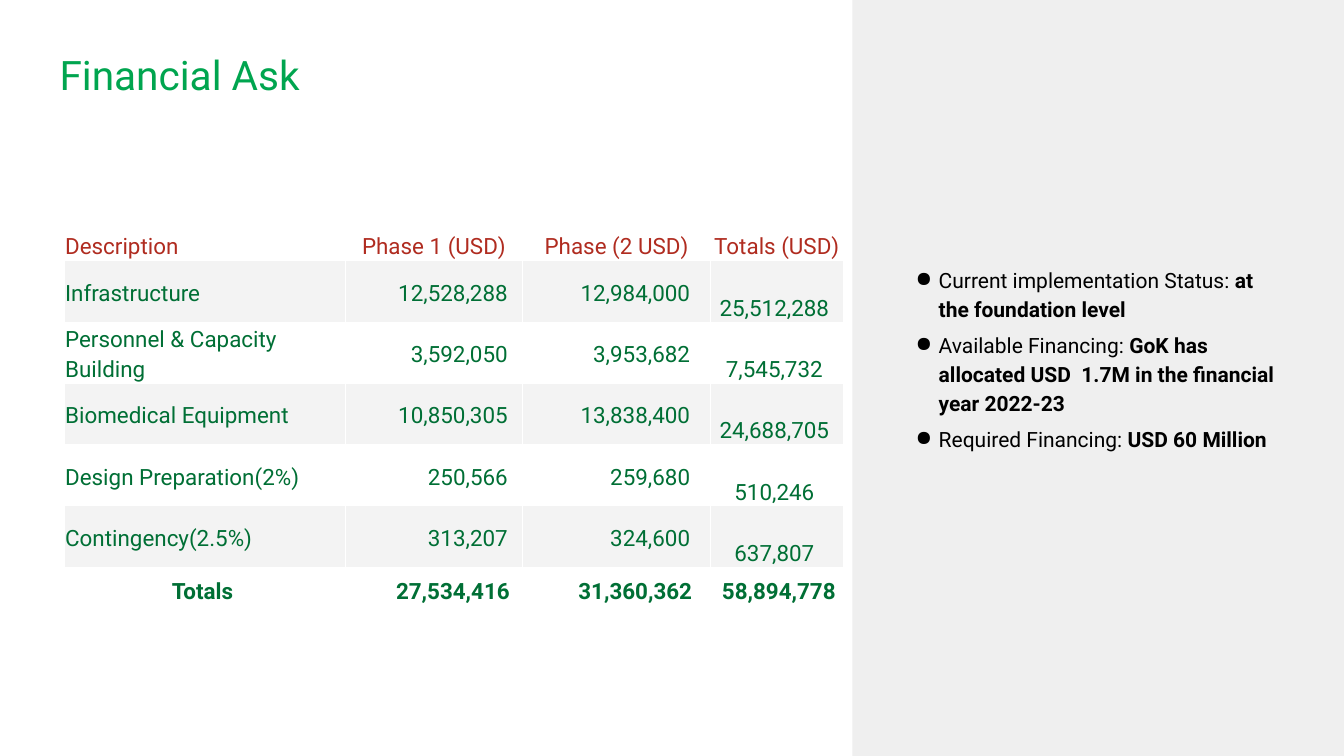
"""Build the Financial Ask slide with its funding table and status notes."""
import dataclasses
import typing

import lxml.etree
import pptx
import pptx.dml.color
import pptx.enum.shapes
import pptx.enum.text
import pptx.oxml.ns
import pptx.util

Pt = pptx.util.Pt
Align = pptx.enum.text.PP_ALIGN
Anchor = pptx.enum.text.MSO_ANCHOR
qualified = pptx.oxml.ns.qn

COLORS = {
    "title": "00A54F",
    "heading": "B02C20",
    "figures": "006F35",
    "ink": "000000",
    "panel": "9E9E9E",
    "band": "F3F3F3",
    "white": "FFFFFF",
}
FONT = "Roboto"
SLIDE_WIDTH, SLIDE_HEIGHT = 1920, 1080
PANEL_LEFT = 1217.5
COLUMN_WIDTHS = (401.5, 253, 268.5, 189.5)
HEADER_HEIGHT, ITEM_HEIGHT, TOTAL_HEIGHT = 45, 87.5, 65


@dataclasses.dataclass(frozen=True)
class Column:
    """Alignment, anchor and side insets of the item and total cells in a column."""
    align: Align
    anchor: Anchor
    right: float
    total_align: Align
    total_left: float
    total_right: float


@dataclasses.dataclass(frozen=True)
class Note:
    """A status note with a plain label and a bold value."""
    label: str
    value: str


COLUMNS = (
    Column(Align.LEFT, Anchor.MIDDLE, 1, Align.CENTER, 1, 8),
    Column(Align.RIGHT, Anchor.MIDDLE, 21, Align.RIGHT, 1, 18),
    Column(Align.RIGHT, Anchor.MIDDLE, 29, Align.RIGHT, 1, 26),
    Column(Align.CENTER, Anchor.BOTTOM, 8, Align.CENTER, 7, 1),
)
ROWS = (
    ("Description", "Phase 1 (USD)", "Phase (2 USD)", "Totals (USD)"),
    ("Infrastructure", "12,528,288", "12,984,000", "25,512,288"),
    ("Personnel & Capacity Building", "3,592,050", "3,953,682", "7,545,732"),
    ("Biomedical Equipment", "10,850,305", "13,838,400", "24,688,705"),
    ("Design Preparation(2%)", "250,566", "259,680", "510,246"),
    ("Contingency(2.5%)", "313,207", "324,600", "637,807"),
    ("Totals", "27,534,416", "31,360,362", "58,894,778"),
)
NOTES = (
    Note("Current implementation Status: ", "at the foundation level"),
    Note("Available Financing: ", "GoK has allocated USD  1.7M in the financial year 2022-23"),
    Note("Required Financing: ", "USD 60 Million"),
)


def rgb(name: str) -> pptx.dml.color.RGBColor:
    """Return a palette colour."""
    return pptx.dml.color.RGBColor.from_string(COLORS[name])


def add_text(paragraph: typing.Any, text: str, *, size: float, color: str, bold: bool = False,
             align: Align = Align.LEFT, line_spacing: float = 1.15) -> None:
    """Append a formatted run to a paragraph."""
    paragraph.alignment = align
    paragraph.line_spacing = line_spacing
    run = paragraph.add_run()
    run.text = text
    run.font.name = FONT
    run.font.size = Pt(size)
    run.font.bold = bold
    run.font.color.rgb = rgb(color)


def set_insets(target: typing.Any, left: float, top: float, right: float, bottom: float) -> None:
    """Set the inner margins of a cell or text frame."""
    target.margin_left, target.margin_top = Pt(left), Pt(top)
    target.margin_right, target.margin_bottom = Pt(right), Pt(bottom)


def add_panel(slide: typing.Any) -> None:
    """Draw the translucent side panel."""
    shape = slide.shapes.add_shape(pptx.enum.shapes.MSO_SHAPE.RECTANGLE, Pt(PANEL_LEFT), Pt(0),
                                   Pt(SLIDE_WIDTH - PANEL_LEFT), Pt(SLIDE_HEIGHT))
    shape.shadow.inherit = False
    shape.line.fill.background()
    shape.fill.solid()
    shape.fill.fore_color.rgb = rgb("panel")
    color = next(shape.element.iter(qualified("a:srgbClr")))
    lxml.etree.SubElement(color, qualified("a:alpha"), val="16000")


def set_title(slide: typing.Any, text: str) -> None:
    """Place and format the title placeholder."""
    title = slide.shapes.title
    title.left, title.top, title.width, title.height = Pt(65.5), Pt(45.5), Pt(1789), Pt(120)
    frame = title.text_frame
    frame.auto_size = pptx.enum.text.MSO_AUTO_SIZE.NONE
    frame.vertical_anchor = Anchor.MIDDLE
    set_insets(frame, 19.5, 19.5, 19.5, 19.5)
    add_text(frame.paragraphs[0], text, size=58, color="title", line_spacing=1.0)


def add_borders(cell: typing.Any) -> None:
    """Give a cell thin white borders, ahead of its fill."""
    properties = cell._tc.get_or_add_tcPr()
    for index, side in enumerate(("lnL", "lnR", "lnT", "lnB")):
        line = lxml.etree.Element(qualified(f"a:{side}"), w=str(Pt(1)))
        fill = lxml.etree.SubElement(line, qualified("a:solidFill"))
        lxml.etree.SubElement(fill, qualified("a:srgbClr"), val=COLORS["white"])
        properties.insert(index, line)


def format_cell(cell: typing.Any, text: str, row: int, index: int) -> None:
    """Fill one table cell according to its row kind and column."""
    column = COLUMNS[index]
    header, total = row == 0, row == len(ROWS) - 1
    align, anchor, left, right = column.align, column.anchor, 1, column.right
    if header:
        align, anchor, right = (Align.CENTER if index else Align.LEFT), Anchor.MIDDLE, 1
    elif total:
        align, anchor = column.total_align, Anchor.MIDDLE
        left, right = column.total_left, column.total_right
    set_insets(cell, left, 1, right, 0)
    cell.vertical_anchor = anchor
    cell.fill.solid()
    cell.fill.fore_color.rgb = rgb("band" if row % 2 else "white")
    add_borders(cell)
    add_text(cell.text_frame.paragraphs[0], text, size=32, bold=total, align=align,
             color="heading" if header else "figures")


def add_funding_table(slide: typing.Any) -> None:
    """Draw the funding table."""
    heights = (HEADER_HEIGHT, *[ITEM_HEIGHT] * (len(ROWS) - 2), TOTAL_HEIGHT)
    table = slide.shapes.add_table(len(ROWS), len(COLUMNS), Pt(92), Pt(327.5),
                                   Pt(sum(COLUMN_WIDTHS)), Pt(sum(heights))).table
    table.first_row = table.horz_banding = False
    for column, width in zip(table.columns, COLUMN_WIDTHS):
        column.width = Pt(width)
    for row, (values, height) in enumerate(zip(ROWS, heights)):
        table.rows[row].height = Pt(height)
        for index, text in enumerate(values):
            format_cell(table.cell(row, index), text, row, index)


def add_notes(slide: typing.Any) -> None:
    """Write the bulleted status notes on the panel."""
    frame = slide.shapes.add_textbox(Pt(1298), Pt(370), Pt(541.5), Pt(280)).text_frame
    frame.word_wrap = True
    set_insets(frame, 7, 7, 7, 7)
    for index, note in enumerate(NOTES):
        paragraph = frame.add_paragraph() if index else frame.paragraphs[0]
        properties = paragraph._p.get_or_add_pPr()
        properties.set("marL", str(Pt(36)))
        properties.set("indent", str(Pt(-33)))
        bullet_color = lxml.etree.SubElement(properties, qualified("a:buClr"))
        lxml.etree.SubElement(bullet_color, qualified("a:srgbClr"), val=COLORS["ink"])
        lxml.etree.SubElement(properties, qualified("a:buChar"), char="●")
        if index:
            paragraph.space_before = Pt(10)
        add_text(paragraph, note.label, size=30, color="ink")
        add_text(paragraph, note.value, size=30, color="ink", bold=True)


def main() -> None:
    """Build and save the presentation."""
    presentation = pptx.Presentation()
    presentation.slide_width, presentation.slide_height = Pt(SLIDE_WIDTH), Pt(SLIDE_HEIGHT)
    slide = presentation.slides.add_slide(presentation.slide_layouts[5])
    add_panel(slide)
    set_title(slide, "Financial Ask")
    add_funding_table(slide)
    add_notes(slide)
    presentation.save("out.pptx")


if __name__ == "__main__":
    main()
